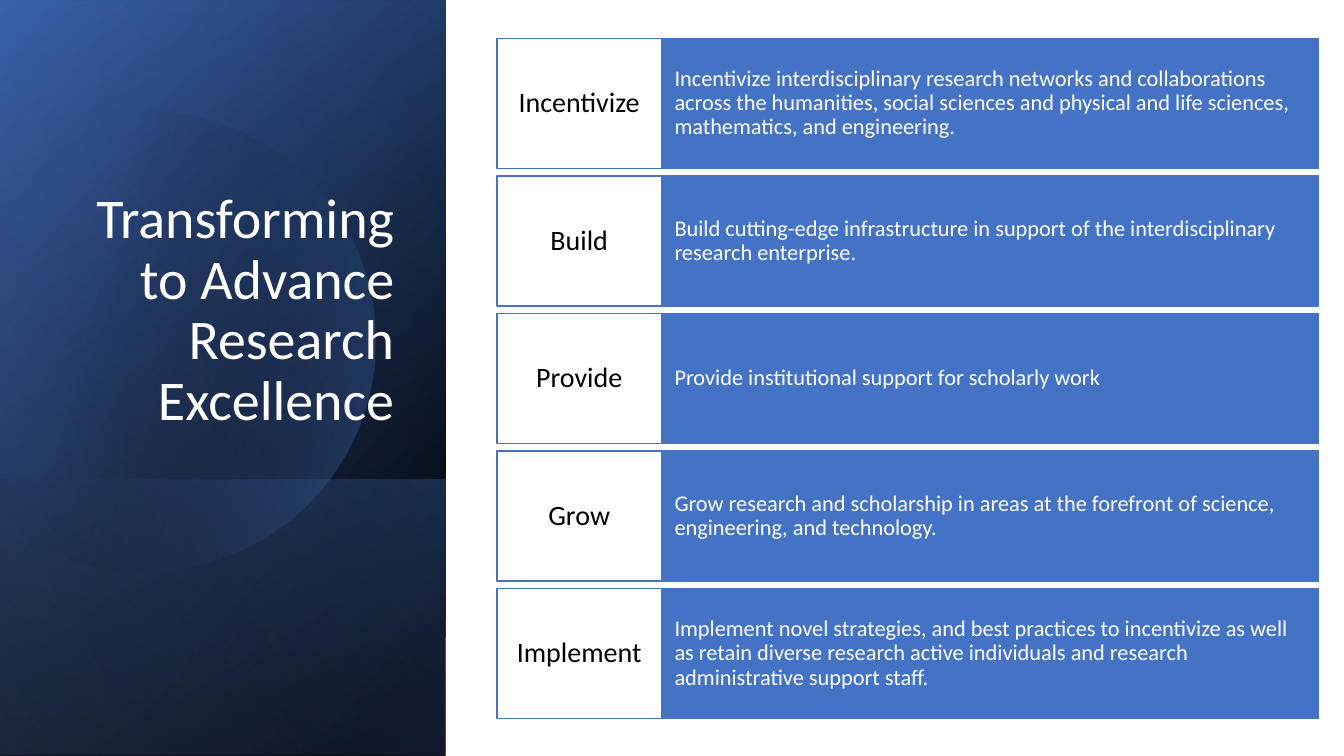
from lxml import etree
from pptx import Presentation
from pptx.dml.color import RGBColor
from pptx.enum.shapes import MSO_SHAPE
from pptx.enum.text import MSO_ANCHOR, MSO_AUTO_SIZE, PP_ALIGN
from pptx.oxml.ns import qn
from pptx.util import Inches, Pt

WHITE = RGBColor(0xFF, 0xFF, 0xFF)
BLACK = RGBColor(0x00, 0x00, 0x00)
BLUE = RGBColor(0x44, 0x72, 0xC4)
DARK_BLUE = RGBColor(0x2F, 0x55, 0x97)
LIGHT_BLUE = RGBColor(0x8F, 0xAA, 0xDC)


def set_gradient(sp, angle, stops):
    """Fill with (position %, colour, opacity %) stops, angle clockwise."""
    sp.shadow.inherit = False
    sp.line.fill.background()
    sp.fill.gradient()
    grad = sp.fill._xPr.find(qn("a:gradFill"))
    grad.set("rotWithShape", "1")
    gs_list = grad.find(qn("a:gsLst"))
    for gs in list(gs_list):
        gs_list.remove(gs)
    for pos, color, opacity in stops:
        gs = etree.SubElement(gs_list, qn("a:gs"), pos=str(pos * 1000))
        clr = etree.SubElement(gs, qn("a:srgbClr"), val=str(color))
        etree.SubElement(clr, qn("a:alpha"), val=str(opacity * 1000))
    lin = grad.find(qn("a:lin"))
    lin.set("ang", str(angle * 60000))
    lin.set("scaled", "0")


def write_text(sp, text, size, color, align, anchor=MSO_ANCHOR.MIDDLE):
    tf = sp.text_frame
    tf.word_wrap = True
    tf.auto_size = MSO_AUTO_SIZE.NONE
    tf.vertical_anchor = anchor
    p = tf.paragraphs[0]
    p.alignment = align
    p.line_spacing = 0.9
    r = p.add_run()
    r.text = text
    r.font.size = Pt(size)
    r.font.name = "Calibri"
    r.font.color.rgb = color


prs = Presentation()
prs.slide_width = Inches(13.33)
prs.slide_height = Inches(7.5)
s = prs.slides.add_slide(prs.slide_layouts[5])

# White backdrop
sp = s.shapes.add_shape(MSO_SHAPE.RECTANGLE, 0, 0, prs.slide_width, prs.slide_height)
sp.shadow.inherit = False
sp.fill.solid()
sp.fill.fore_color.rgb = WHITE
sp.line.fill.background()

# Left panel: mirrored, quarter-turned gradient layers (left, top, length, angle, stops)
PANEL_WIDTH = 4.42
layers = [
    (-1.54, 1.54, 7.5, 50, [(8, BLACK, 100), (100, DARK_BLUE, 100)]),
    (-1.54, 1.55, 7.5, 30, [(0, BLACK, 0), (99, BLUE, 46)]),
    (0.84, 3.92, 2.74, 130, [(2, BLUE, 29), (100, BLACK, 30)]),
    "disc",
    (-1.54, 1.53, 7.5, 120, [(0, BLACK, 0), (99, LIGHT_BLUE, 11)]),
]
# Bezier arcs of the disc, cut off by the left slide edge
disc_start = (1.49, 1.1)
disc_arcs = [
    [(2.46, 1.12), (3.35, 1.77), (3.63, 2.75)],
    [(3.98, 3.97), (3.28, 5.23), (2.07, 5.58)],
    [(1.31, 5.8), (0.53, 5.61), (0, 5.16)],
    [(0, 3.98), (0, 2.79), (0, 1.61)],
    [(0.23, 1.42), (0.5, 1.28), (0.8, 1.19)],
    [(1.03, 1.13), (1.26, 1.1), (1.49, 1.1)],
]
STEPS = 16
for layer in layers:
    if layer == "disc":
        points, a = [], disc_start
        for b, c, d in disc_arcs:
            for i in range(1, STEPS + 1):
                t = i / STEPS
                u = 1 - t
                points.append([
                    Inches(u**3 * a[k] + 3 * u * u * t * b[k] + 3 * u * t * t * c[k] + t**3 * d[k])
                    for k in (0, 1)
                ])
            a = d
        builder = s.shapes.build_freeform(Inches(disc_start[0]), Inches(disc_start[1]))
        builder.add_line_segments(points, close=True)
        set_gradient(builder.convert_to_shape(), 14, [(29, BLACK, 0), (100, BLUE, 43)])
        continue
    left, top, length, angle, stops = layer
    sp = s.shapes.add_shape(MSO_SHAPE.RECTANGLE, Inches(left), Inches(top),
                            Inches(length), Inches(PANEL_WIDTH))
    sp.rotation = 90
    sp._element.spPr.find(qn("a:xfrm")).set("flipH", "1")
    set_gradient(sp, angle, stops)

# Title, brought in front of the panel
title = s.shapes.title
title.left, title.top = Inches(0.51), Inches(0.64)
title.width, title.height = Inches(3.5), Inches(3.7)
write_text(title, "Transforming to Advance Research Excellence", 40, WHITE,
           PP_ALIGN.RIGHT, MSO_ANCHOR.BOTTOM)
s.shapes._spTree.append(title._element)

# Rows: verb on the left, description on the right
rows = [
    ("Incentivize", "Incentivize interdisciplinary research networks and collaborations across "
     "the humanities, social sciences and physical and life sciences, mathematics, and engineering."),
    ("Build", "Build cutting-edge infrastructure in support of the interdisciplinary "
     "research enterprise."),
    ("Provide", "Provide institutional support for scholarly work"),
    ("Grow", "Grow research and scholarship in areas at the forefront of science, "
     "engineering, and technology."),
    ("Implement", "Implement novel strategies, and best practices to incentivize as well as retain "
     "diverse research active individuals and research administrative support staff."),
]
ROW_TOP, ROW_HEIGHT, ROW_GAP = 0.38, 1.29, 0.075
for i, (verb, description) in enumerate(rows):
    top = ROW_TOP + i * (ROW_HEIGHT + ROW_GAP)
    cells = [
        (6.56, 6.52, BLUE, description, 16, WHITE, PP_ALIGN.LEFT, 0.13, 0.33),
        (4.93, 1.63, WHITE, verb, 20, BLACK, PP_ALIGN.CENTER, 0.09, 0.13),
    ]
    for left, width, fill, text, size, color, align, inset_x, inset_y in cells:
        sp = s.shapes.add_shape(MSO_SHAPE.RECTANGLE, Inches(left), Inches(top),
                                Inches(width), Inches(ROW_HEIGHT))
        sp.shadow.inherit = False
        sp.fill.solid()
        sp.fill.fore_color.rgb = fill
        sp.line.color.rgb = BLUE
        sp.line.width = Pt(1)
        tf = sp.text_frame
        tf.margin_left = tf.margin_right = Inches(inset_x)
        tf.margin_top = tf.margin_bottom = Inches(inset_y)
        write_text(sp, text, size, color, align)

prs.save("out.pptx")
